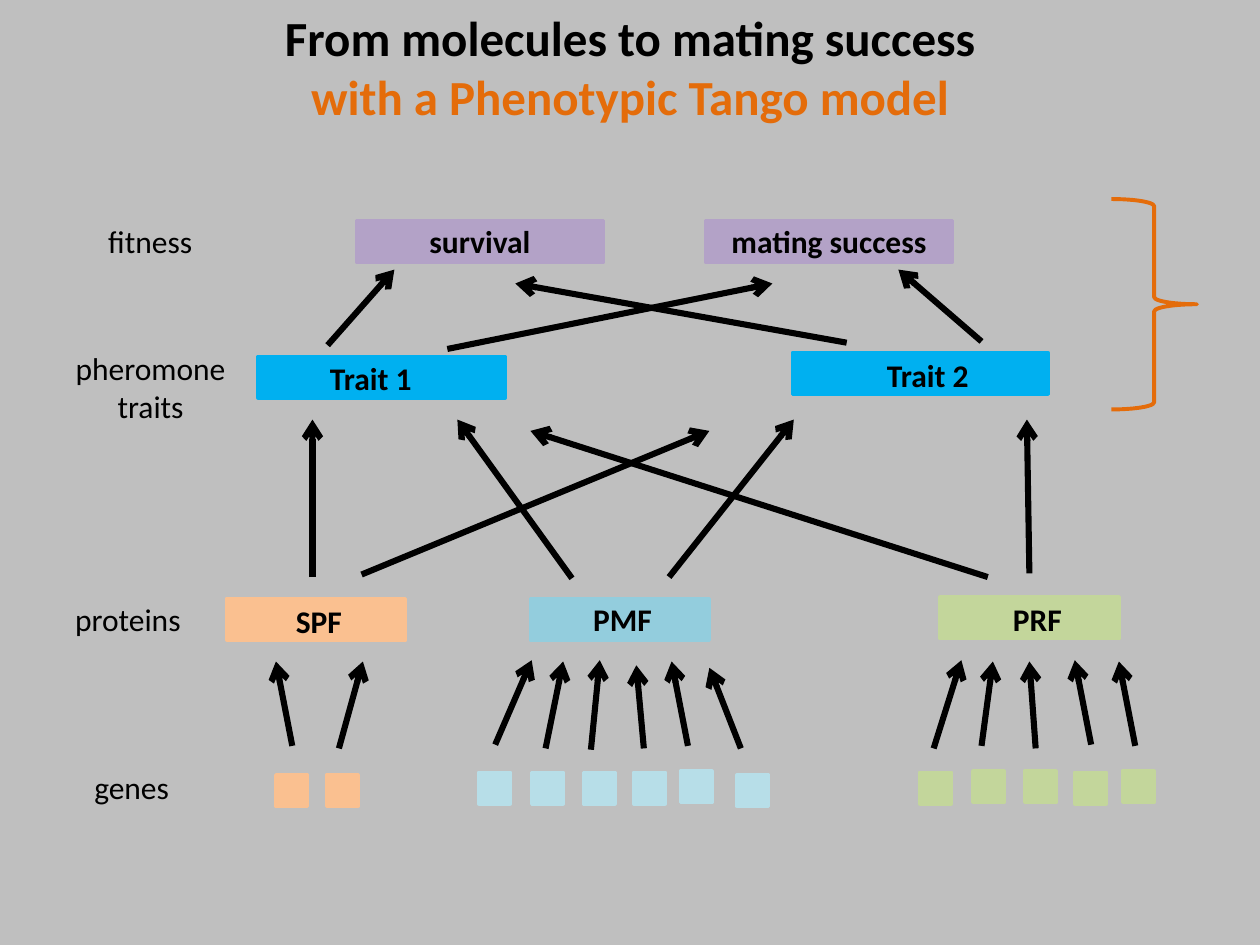
import pptx
import pptx.util
import pptx.dml.color
import pptx.enum.shapes
import pptx.enum.text
import pptx.oxml
import pptx.oxml.ns

PX = 9144
SHAPE = pptx.enum.shapes.MSO_SHAPE
ALIGN = pptx.enum.text.PP_ALIGN
ANCHOR = pptx.enum.text.MSO_ANCHOR


def paint(target, color):
    target.rgb = pptx.dml.color.RGBColor.from_string(color)


def write(tf, lines, align, size, bold, colors, frame):
    for name, value in frame.items():
        setattr(tf, name, value)
    for i, line in enumerate(lines):
        p = tf.paragraphs[0] if i == 0 else tf.add_paragraph()
        p.alignment = align
        r = p.add_run()
        r.text = line
        font = {"name": "Calibri", "size": pptx.util.Pt(size), "bold": bold}
        for name, value in font.items():
            setattr(r.font, name, value)
        paint(r.font.color, colors[i % len(colors)])


prs = pptx.Presentation()
prs.slide_width, prs.slide_height = 1000 * PX, 750 * PX
s = prs.slides.add_slide(prs.slide_layouts[6])
s.background.fill.solid()
paint(s.background.fill.fore_color, "BFBFBF")

sp = s.shapes.add_textbox(50 * PX, 30 * PX, 900 * PX, 45 * PX)
write(sp.text_frame, ["From molecules to mating success", "with a Phenotypic Tango model"],
      ALIGN.CENTER, 28, True, ["000000", "E46C0A"],
      {"word_wrap": True, "vertical_anchor": ANCHOR.MIDDLE})

genes = [
    ("FAC090", [(219, 615), (259, 615)]),
    ("B7DEE8", [(380, 613), (422, 613), (463, 613), (503, 613), (540, 612), (585, 615)]),
    ("C3D69B", [(730, 613), (772, 612), (813, 612), (853, 613), (891, 612)]),
]
boxes = [(x, y, 25, 25, color, "") for color, spots in genes for x, y in spots]
boxes += [
    (180, 475, 142, 33, "FAC090", ""),
    (421, 475, 142, 33, "93CDDD", ""),
    (746, 474, 142, 33, "C3D69B", ""),
    (205, 283, 196, 33, "00B0F0", ""),
    (629, 280, 203, 33, "00B0F0", ""),
    (283, 175, 196, 33, "B3A2C7", "survival"),
    (560, 175, 196, 33, "B3A2C7", "mating success"),
]
for x, y, w, h, color, text in boxes:
    sp = s.shapes.add_shape(SHAPE.RECTANGLE, x * PX, y * PX, w * PX, h * PX)
    sp.shadow.inherit = False
    sp.fill.solid()
    paint(sp.fill.fore_color, color)
    paint(sp.line.color, color)
    sp.line.width = pptx.util.Pt(2)
    if text:
        write(sp.text_frame, [text], ALIGN.CENTER, 18, True, ["000000"],
              {"word_wrap": True, "vertical_anchor": ANCHOR.MIDDLE})

arrows = [
    (232, 592, 219, 525), (269, 594, 288, 525),
    (393, 591, 422, 524), (433, 594, 447, 525), (469, 595, 476, 524),
    (511, 594, 505, 528), (546, 592, 533, 525), (588, 594, 563, 530),
    (741, 594, 763, 524), (779, 592, 788, 525), (822, 594, 817, 525),
    (866, 591, 853, 524), (901, 592, 888, 525),
    (248, 458, 248, 333), (287, 456, 563, 342), (454, 459, 363, 333),
    (531, 458, 630, 333), (784, 458, 421, 342), (817, 455, 815, 333),
    (355, 277, 613, 225), (260, 274, 313, 214),
    (672, 272, 409, 225), (779, 271, 713, 214),
]
for ends in arrows:
    sp = s.shapes.add_connector(pptx.enum.shapes.MSO_CONNECTOR.STRAIGHT, *[v * PX for v in ends])
    paint(sp.line.color, "000000")
    sp.line.width = pptx.util.Pt(3.5)
    tail = pptx.oxml.parse_xml('<a:tailEnd %s type="arrow"/>' % pptx.oxml.ns.nsdecls("a"))
    sp.line._get_or_add_ln().append(tail)
    sp._element.spPr.append(pptx.oxml.parse_xml("<a:effectLst %s/>" % pptx.oxml.ns.nsdecls("a")))

labels = [
    (225, 473, 57, 40, ["SPF"], True, ALIGN.LEFT),
    (461, 471, 67, 40, ["PMF"], True, ALIGN.LEFT),
    (794, 471, 59, 40, ["PRF"], True, ALIGN.LEFT),
    (252, 280, 86, 40, ["Trait 1"], True, ALIGN.LEFT),
    (694, 278, 86, 40, ["Trait 2"], True, ALIGN.LEFT),
    (65, 605, 80, 40, ["genes"], False, ALIGN.LEFT),
    (49, 471, 105, 71, ["proteins"], False, ALIGN.CENTER),
    (49, 272, 141, 71, ["pheromone", "traits"], False, ALIGN.CENTER),
    (76, 171, 88, 40, ["fitness"], False, ALIGN.LEFT),
]
for x, y, w, h, lines, bold, align in labels:
    sp = s.shapes.add_textbox(x * PX, y * PX, w * PX, h * PX)
    write(sp.text_frame, lines, align, 18, bold, ["000000"], {"word_wrap": False})

sp = s.shapes.add_shape(SHAPE.RIGHT_BRACE, 882 * PX, 158 * PX, 68 * PX, 167 * PX)
sp.shadow.inherit = False
sp.fill.background()
paint(sp.line.color, "E46C0A")
sp.line.width = pptx.util.Pt(2.25)

prs.save("out.pptx")
